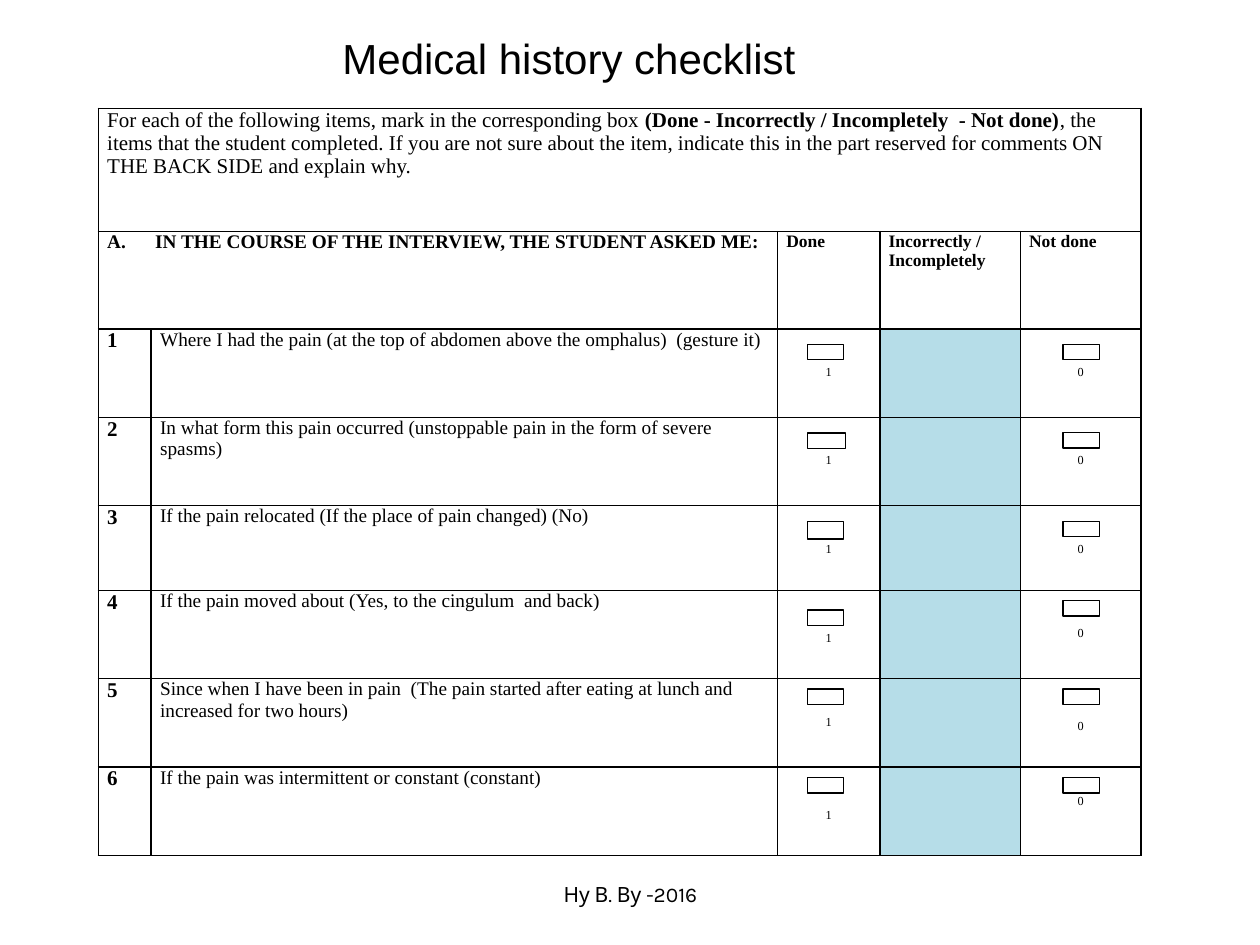
import pptx
import pptx.dml.color
import pptx.enum.shapes
import pptx.enum.text
import pptx.oxml
import pptx.oxml.ns
import pptx.util
from pptx.util import Pt

BLACK = pptx.dml.color.RGBColor(0x00, 0x00, 0x00)
WHITE = pptx.dml.color.RGBColor(0xFF, 0xFF, 0xFF)
LIGHT_BLUE = pptx.dml.color.RGBColor(0xB6, 0xDD, 0xE8)
CENTER = pptx.enum.text.PP_ALIGN.CENTER

INTRODUCTION = [
    ("For each of the following items, mark in the corresponding box ", False),
    ("(Done - Incorrectly / Incompletely  - Not done)", True),
    (", the items that the student completed. If you are not sure about the item, "
     "indicate this in the part reserved for comments ON THE BACK SIDE and explain why.", False),
]
# Question, then the distance from the row top to each score (done, not done)
QUESTIONS = [
    ("Where I had the pain (at the top of abdomen above the omphalus)  (gesture it)", 21, 21),
    ("In what form this pain occurred (unstoppable pain in the form of severe spasms)", 21, 21),
    ("If the pain relocated (If the place of pain changed) (No)", 21, 21),
    ("If the pain moved about (Yes, to the cingulum  and back)", 23.5, 21),
    ("Since when I have been in pain  (The pain started after eating at lunch and "
     "increased for two hours)", 21, 23.5),
    ("If the pain was intermittent or constant (constant)", 23.5, 15.5),
]
COLUMN_WIDTHS = [30.2, 357.9, 58.5, 80.3, 69]
ROW_HEIGHTS = [70.5, 55.6, 50.5, 50.4, 48.5, 50.5, 50.5, 50.5]


def style_paragraph(paragraph, size, name="Times New Roman", bold=None, alignment=None):
    paragraph.font.size = Pt(size)
    paragraph.font.name = name
    paragraph.font.bold = bold
    paragraph.font.color.rgb = BLACK
    paragraph.alignment = alignment


def write_cell(cell, text, size, bold=False, alignment=None, top=0):
    cell.margin_top = Pt(top)
    paragraph = cell.text_frame.paragraphs[0]
    paragraph.text = text
    style_paragraph(paragraph, size, bold=bold, alignment=alignment)
    return paragraph


presentation = pptx.Presentation()
presentation.slide_width = Pt(720)
presentation.slide_height = Pt(540)
slide = presentation.slides.add_slide(presentation.slide_layouts[6])

# Footer and title
for text, size, name, box in [
    ("Ну В. Ву -2016", 12, "Karla", (246.2, 500.4, 228.2, 28.8)),
    ("Medical history checklist", 24, "Arial", (127.4, 15.1, 395.3, 36)),
]:
    text_box = slide.shapes.add_textbox(*map(Pt, box))
    text_box.text_frame.word_wrap = True
    paragraph = text_box.text_frame.paragraphs[0]
    paragraph.text = text
    style_paragraph(paragraph, size, name, alignment=CENTER)

# Table grid
table = slide.shapes.add_table(
    len(ROW_HEIGHTS), len(COLUMN_WIDTHS), Pt(56.2), Pt(61.9),
    Pt(sum(COLUMN_WIDTHS)), Pt(sum(ROW_HEIGHTS))).table
table.first_row = False
table.horz_banding = False
for column, width in zip(table.columns, COLUMN_WIDTHS):
    column.width = Pt(width)
for row, height in zip(table.rows, ROW_HEIGHTS):
    row.height = Pt(height)

# Cell margins, fills and borders
for row_index, row in enumerate(table.rows):
    for column_index, cell in enumerate(row.cells):
        cell.margin_left = cell.margin_right = Pt(5.1)
        cell.margin_top = cell.margin_bottom = 0
        if row_index >= 2 and column_index == 3:
            cell.fill.solid()
            cell.fill.fore_color.rgb = LIGHT_BLUE
        else:
            cell.fill.background()
        properties = cell._tc.get_or_add_tcPr()
        for position, side in enumerate(("lnL", "lnR", "lnT", "lnB")):
            properties.insert(position, pptx.oxml.parse_xml(
                f'<a:{side} {pptx.oxml.ns.nsdecls("a")} w="{Pt(1)}"><a:solidFill>'
                f'<a:srgbClr val="{BLACK}"/></a:solidFill></a:{side}>'))

# Introduction
table.cell(0, 0).merge(table.cell(0, 4))
paragraph = table.cell(0, 0).text_frame.paragraphs[0]
style_paragraph(paragraph, 12)
for text, bold in INTRODUCTION:
    run = paragraph.add_run()
    run.text = text
    run.font.bold = bold

# Column headings, the first with a hanging indent
table.cell(1, 0).merge(table.cell(1, 1))
heading = write_cell(
    table.cell(1, 0), "А.\tIN THE COURSE OF THE INTERVIEW, THE STUDENT ASKED ME:", 11, True)
heading_properties = heading._p.get_or_add_pPr()
heading_properties.set("marL", str(Pt(27.4)))
heading_properties.set("indent", str(-Pt(27.4)))
for column_index, text in enumerate(("Done", "Incorrectly / Incompletely", "Not done"), 2):
    write_cell(table.cell(1, column_index), text, 10, True)

# Questions and scores
for number, (question, done_top, not_done_top) in enumerate(QUESTIONS, 1):
    row_index = number + 1
    write_cell(table.cell(row_index, 0), str(number), 12, True)
    write_cell(table.cell(row_index, 1), question, 11)
    write_cell(table.cell(row_index, 2), "1", 7, alignment=CENTER, top=done_top)
    write_cell(table.cell(row_index, 4), "0", 7, alignment=CENTER, top=not_done_top)

# Tick boxes: left edge, then top, width and height for each question
DONE_BOXES = [(196.8, 20.9, 8.8), (247.5, 21.8, 8.8), (298, 20.9, 10.1),
              (348.6, 20.9, 8.8), (393.8, 20.9, 8.8), (444.4, 20.9, 8.8)]
NOT_DONE_BOXES = [(top, 20.9, 8.8) for top in (196.8, 247.3, 298, 343.2, 393.8, 444.4)]
for left, boxes in ((461.3, DONE_BOXES), (607.5, NOT_DONE_BOXES)):
    for top, width, height in boxes:
        tick_box = slide.shapes.add_shape(
            pptx.enum.shapes.MSO_SHAPE.RECTANGLE, Pt(left), Pt(top), Pt(width), Pt(height))
        tick_box.shadow.inherit = False
        tick_box.fill.solid()
        tick_box.fill.fore_color.rgb = WHITE
        tick_box.line.color.rgb = BLACK
        tick_box.line.width = Pt(0.75)

presentation.save("out.pptx")
